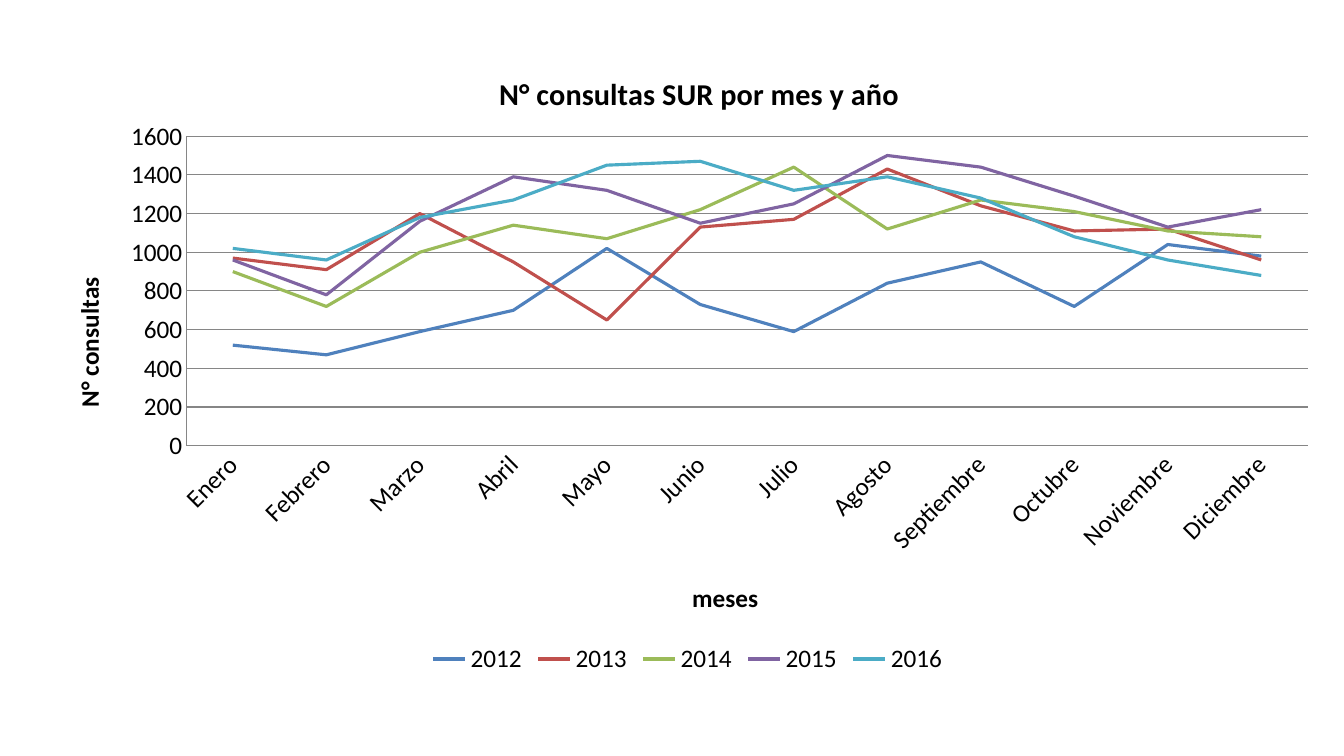
from dataclasses import dataclass

from lxml import etree
from pptx import Presentation
from pptx import util as u
from pptx.chart.data import CategoryChartData
from pptx.dml.color import RGBColor
from pptx.enum import chart as ch
from pptx.oxml.ns import qn


@dataclass(frozen=True)
class Theme:
    """Colours, font and type sizes of the slide."""
    font: str = "Calibri"
    text: str = "000000"
    rule: str = "868686"
    body: float = 18
    title: float = 21.6
    line: float = 2.25
    rule_width: float = 0.75


THEME = Theme()
MONTHS = ["Enero", "Febrero", "Marzo", "Abril", "Mayo", "Junio", "Julio",
          "Agosto", "Septiembre", "Octubre", "Noviembre", "Diciembre"]
YEARS = {
    "2012": ("4F81BD", [520, 470, 590, 700, 1020, 730, 590, 840, 950, 720, 1040, 980]),
    "2013": ("C0504D", [970, 910, 1200, 950, 650, 1130, 1170, 1430, 1240, 1110, 1120, 960]),
    "2014": ("9BBB59", [900, 720, 1000, 1140, 1070, 1220, 1440, 1120, 1270, 1210, 1110, 1080]),
    "2015": ("8064A2", [960, 780, 1160, 1390, 1320, 1150, 1250, 1500, 1440, 1290, 1130, 1220]),
    "2016": ("4BACC6", [1020, 960, 1180, 1270, 1450, 1470, 1320, 1390, 1280, 1080, 960, 880]),
}


def style_font(font, size, bold=False):
    """Apply the theme's typeface and colour to a font."""
    font.name, font.size, font.bold = THEME.font, u.Pt(size), bold
    font.color.rgb = RGBColor.from_string(THEME.text)


def style_line(line, color, width):
    """Give a line its colour and width in points."""
    line.color.rgb = RGBColor.from_string(color)
    line.width = u.Pt(width)


def place(element, index, **shares):
    """Fix a chart part's position as shares of the chart's size."""
    for old in element.findall(qn("c:layout")):
        element.remove(old)
    layout = etree.Element(qn("c:layout"))
    element.insert(index, layout)
    manual = etree.SubElement(layout, qn("c:manualLayout"))
    modes = {"xMode": "edge", "yMode": "edge"}
    if "w" in shares:
        modes = {"layoutTarget": "inner", **modes}
    for tag, value in {**modes, **shares}.items():
        etree.SubElement(manual, qn(f"c:{tag}")).set("val", str(value))


def rotate(element, degrees):
    """Turn the text held by a chart element."""
    body = next(element.iter(qn("a:bodyPr")))
    body.set("rot", str(degrees * 60000))
    body.set("vert", "horz")


def add_title(title, words, size, x, y, degrees=0):
    """Write and place a chart or axis title."""
    r = title.text_frame.paragraphs[0].add_run()
    r.text = words
    style_font(r.font, size, bold=True)
    place(title._element, 1, x=x, y=y)
    rotate(title._element, degrees)


def style_axis(axis):
    """Set the rule and labels shared by both axes."""
    axis.major_tick_mark = axis.minor_tick_mark = ch.XL_TICK_MARK.NONE
    style_line(axis.format.line, THEME.rule, THEME.rule_width)
    style_font(axis.tick_labels.font, THEME.body)


def add_line_chart(s, left, top, width, height):
    """Add the monthly line chart with one series per year."""
    data = CategoryChartData(number_format="General")
    data.categories = MONTHS
    for year, (_, values) in YEARS.items():
        data.add_series(year, values)
    chart = s.shapes.add_chart(ch.XL_CHART_TYPE.LINE, left, top, width, height, data).chart
    style_font(chart.font, THEME.body)
    chart.plots[0].vary_by_categories = False
    for series in chart.plots[0].series:
        series.smooth = False
        series.marker.style = ch.XL_MARKER_STYLE.NONE
        style_line(series.format.line, YEARS[series.name][0], THEME.line)
    return chart


def style_chart(chart):
    """Format the titles, axes, plot area and legend."""
    months, counts = chart.category_axis, chart.value_axis
    for axis in (months, counts):
        style_axis(axis)
    rotate(months._element.find(qn("c:txPr")), -45)
    counts.minimum_scale, counts.maximum_scale, counts.major_unit = 0, 1600, 200
    style_line(counts.major_gridlines.format.line, THEME.rule, THEME.rule_width)
    chart.has_title = True
    add_title(chart.chart_title, "N° consultas SUR por mes y año", THEME.title, 0.35, 0.05)
    add_title(months.axis_title, "meses", THEME.body, 0.5, 0.84)
    add_title(counts.axis_title, "N° consultas", THEME.body, 0.02, 0.37, -90)
    plot_area = next(chart._chartSpace.iter(qn("c:plotArea")))
    place(plot_area, 0, x=0.112, y=0.158, w=0.868, h=0.48)
    chart.has_legend = True
    chart.legend.position = ch.XL_LEGEND_POSITION.BOTTOM
    chart.legend.include_in_layout = False
    style_font(chart.legend.font, THEME.body)


def main():
    """Build the slide and save it."""
    prs = Presentation()
    prs.slide_width, prs.slide_height = u.Inches(13.33), u.Inches(7.5)
    s = prs.slides.add_slide(prs.slide_layouts[6])
    chart = add_line_chart(s, u.Inches(0.41), u.Inches(0.34), u.Inches(12.82), u.Inches(6.4))
    style_chart(chart)
    prs.save("out.pptx")


if __name__ == "__main__":
    main()
